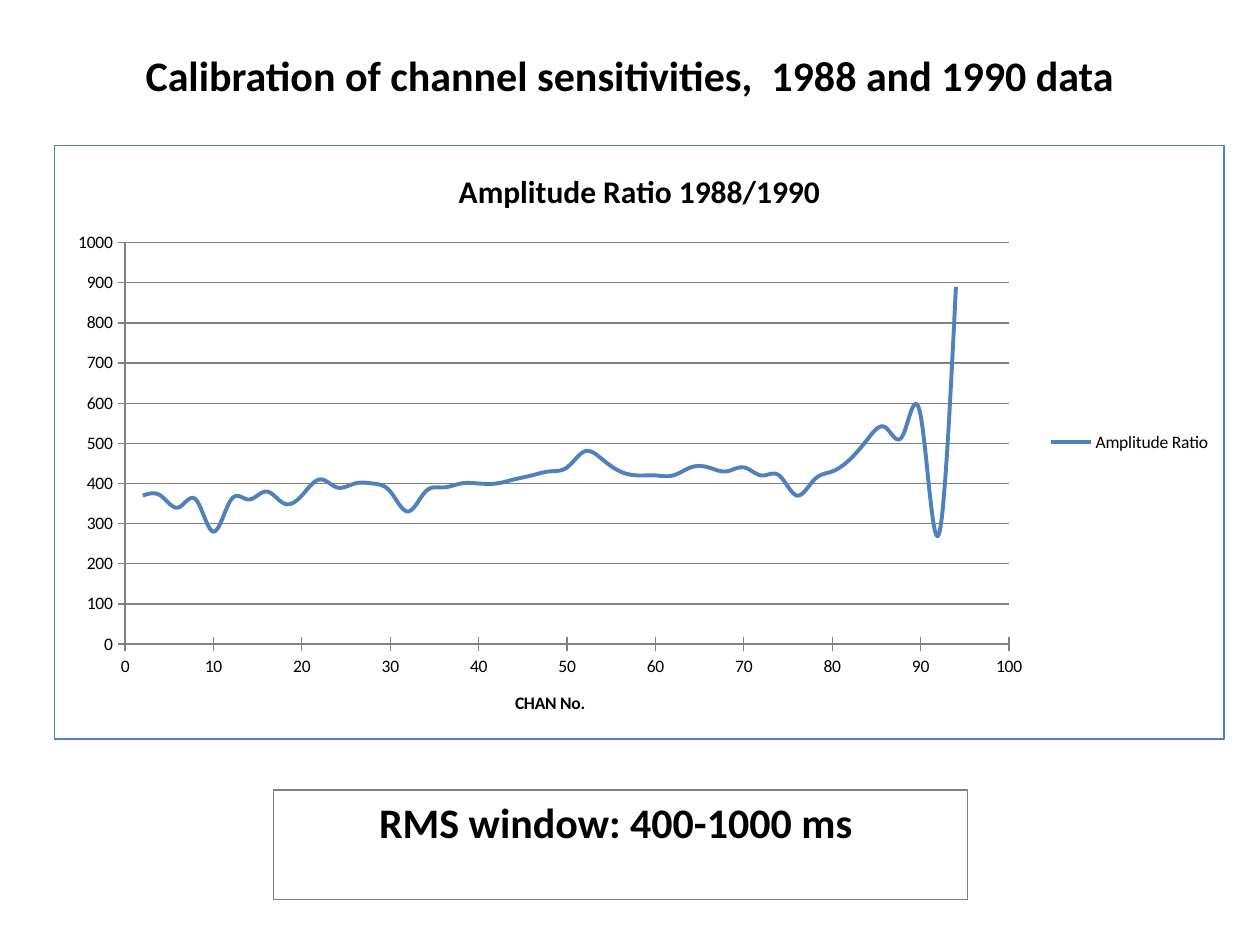
from dataclasses import dataclass

from lxml import etree
from pptx import Presentation
from pptx import util as u
from pptx.chart import data as chart_data
from pptx.dml import color
from pptx.enum import chart as charts, shapes, text
from pptx.oxml import ns


@dataclass(frozen=True)
class Theme:
    font: str = "Calibri"
    black: color.RGBColor = color.RGBColor(0, 0, 0)
    grey: color.RGBColor = color.RGBColor(0x80, 0x80, 0x80)
    blue: color.RGBColor = color.RGBColor(0x4F, 0x81, 0xBD)
    heading: int = 24
    chart_title: int = 18
    chart_text: int = 10
    thin: float = 0.75
    curve: float = 2.25


THEME = Theme()
FIRST_CHANNEL, CHANNEL_STEP = 2, 2
RATIOS = [
    370, 370, 340, 360, 280, 360, 360, 380, 350, 370, 410, 390,
    400, 400, 380, 330, 380, 390, 400, 400, 400, 410, 420, 430,
    440, 480, 460, 430, 420, 420, 420, 440, 440, 430, 440, 420,
    420, 370, 410, 430, 460, 510, 540, 520, 570, 270, 890,
]


def style_font(font, size, bold=False):
    font.name = THEME.font
    font.size = u.Pt(size)
    font.bold = bold
    font.color.rgb = THEME.black


def style_line(line, rgb, width):
    line.color.rgb = rgb
    line.width = u.Pt(width)


def write_text(frame, words, size):
    paragraph = frame.paragraphs[0]
    paragraph.alignment = text.PP_ALIGN.CENTER
    run = paragraph.add_run()
    run.text = words
    style_font(run.font, size, bold=True)


def add_title(slide, words):
    title = slide.shapes.title
    title.left, title.top = u.Inches(0.5), u.Inches(0.3)
    title.width, title.height = u.Inches(9), u.Inches(0.54)
    title.text_frame.vertical_anchor = text.MSO_ANCHOR.BOTTOM
    write_text(title.text_frame, words, THEME.heading)


def add_note(slide, words):
    note = slide.shapes.add_shape(
        shapes.MSO_SHAPE.RECTANGLE,
        u.Inches(2.17), u.Inches(6.27), u.Inches(5.51), u.Inches(0.87))
    note.shadow.inherit = False
    note.fill.background()
    style_line(note.line, THEME.grey, THEME.thin)
    note.text_frame.word_wrap = True
    note.text_frame.vertical_anchor = text.MSO_ANCHOR.TOP
    write_text(note.text_frame, words, THEME.heading)


def style_axis(axis, maximum, step):
    axis.minimum_scale, axis.maximum_scale = 0, maximum
    axis.major_unit = step
    axis.major_tick_mark = charts.XL_TICK_MARK.CROSS
    axis.minor_tick_mark = charts.XL_TICK_MARK.NONE
    axis.tick_labels.number_format = "General"
    axis.tick_labels.number_format_is_linked = False
    style_font(axis.tick_labels.font, THEME.chart_text)
    style_line(axis.format.line, THEME.grey, THEME.thin)


def set_chart_border(chart, rgb, width):
    properties = etree.Element(ns.qn("c:spPr"))
    etree.SubElement(properties, ns.qn("a:noFill"))
    line = etree.SubElement(properties, ns.qn("a:ln"), w=str(u.Pt(width)))
    fill = etree.SubElement(line, ns.qn("a:solidFill"))
    etree.SubElement(fill, ns.qn("a:srgbClr"), val=str(rgb))
    chart.element.find(ns.qn("c:chart")).addnext(properties)


def add_ratio_chart(slide):
    data = chart_data.XyChartData()
    points = data.add_series("Amplitude Ratio")
    for index, ratio in enumerate(RATIOS):
        points.add_data_point(FIRST_CHANNEL + index * CHANNEL_STEP, ratio)
    chart = slide.shapes.add_chart(
        charts.XL_CHART_TYPE.XY_SCATTER_SMOOTH_NO_MARKERS,
        u.Inches(0.43), u.Inches(1.15), u.Inches(9.29), u.Inches(4.72),
        data).chart
    style_font(chart.font, THEME.chart_text)
    chart.has_title = True
    write_text(chart.chart_title.text_frame, "Amplitude Ratio 1988/1990",
               THEME.chart_title)
    chart.chart_title.include_in_layout = False

    chart.has_legend = True
    chart.legend.position = charts.XL_LEGEND_POSITION.RIGHT
    chart.legend.include_in_layout = False
    style_font(chart.legend.font, THEME.chart_text)

    channels, ratios = chart.category_axis, chart.value_axis
    style_axis(channels, 100, 10)
    style_axis(ratios, 1000, 100)
    channels.has_major_gridlines = False
    ratios.has_major_gridlines = True
    style_line(ratios.major_gridlines.format.line, THEME.grey, THEME.thin)
    write_text(channels.axis_title.text_frame, "CHAN No.", THEME.chart_text)

    plot = chart.plots[0]
    plot.vary_by_categories = False
    series = plot.series[0]
    series.marker.style = charts.XL_MARKER_STYLE.NONE
    style_line(series.format.line, THEME.blue, THEME.curve)
    for smooth in series._element.findall(ns.qn("c:smooth")):
        smooth.set("val", "1")
    set_chart_border(chart, THEME.blue, THEME.thin)


def main():
    presentation = Presentation()
    presentation.slide_width = u.Inches(10)
    presentation.slide_height = u.Inches(7.5)
    slide = presentation.slides.add_slide(presentation.slide_layouts[5])
    add_title(slide, "Calibration of channel sensitivities,  1988 and 1990 data")
    add_ratio_chart(slide)
    add_note(slide, "RMS window: 400-1000 ms ")
    presentation.save("out.pptx")


if __name__ == "__main__":
    main()
